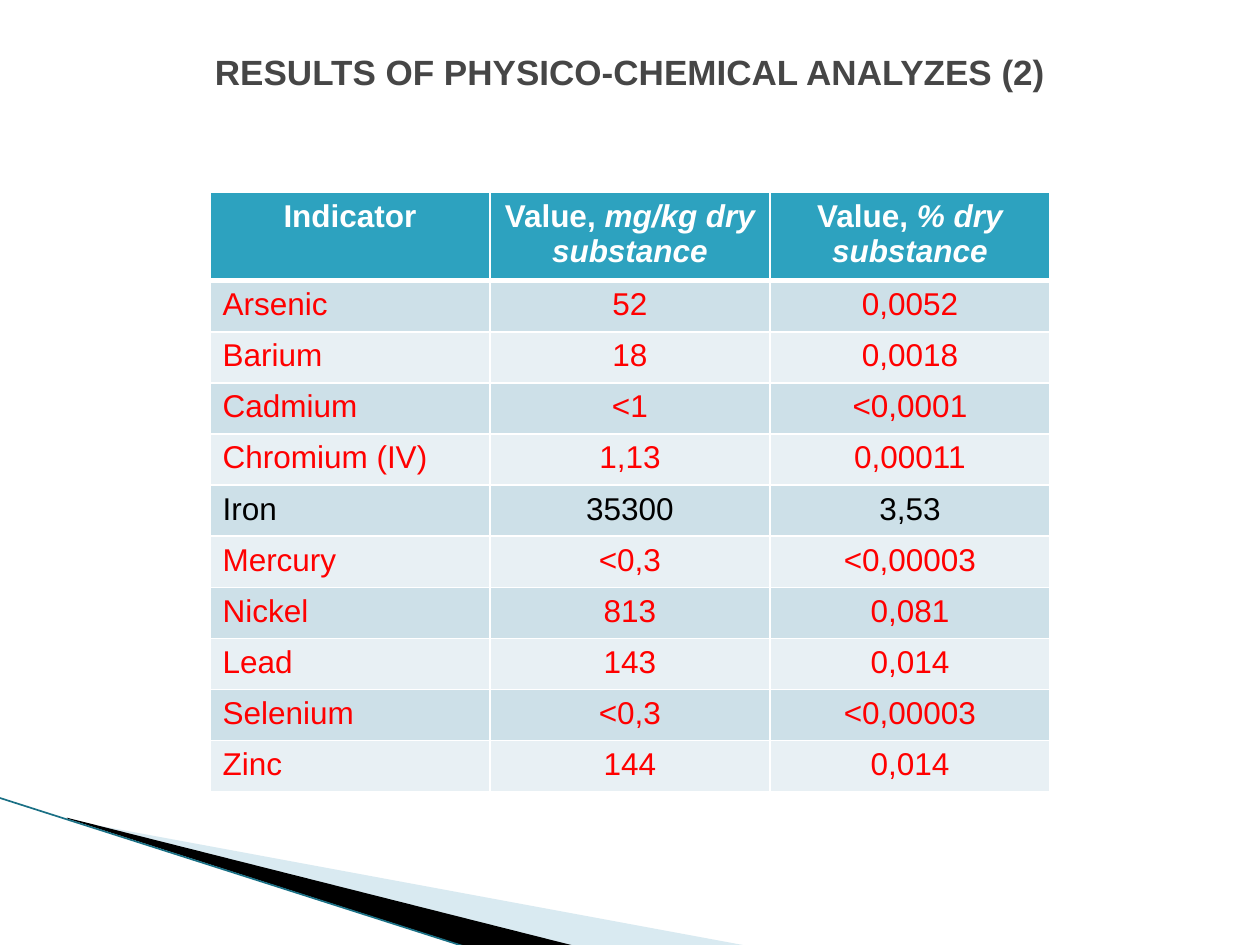
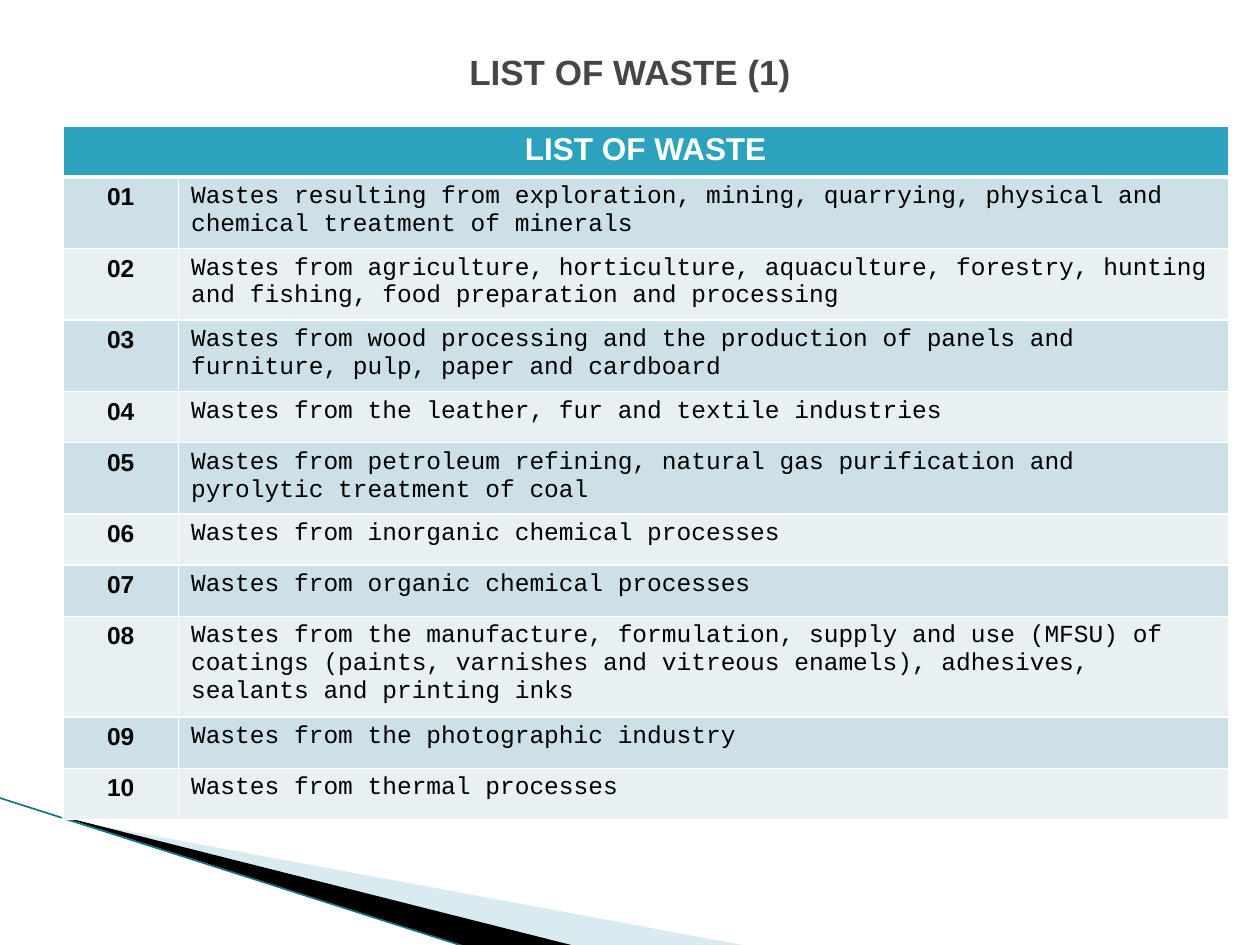
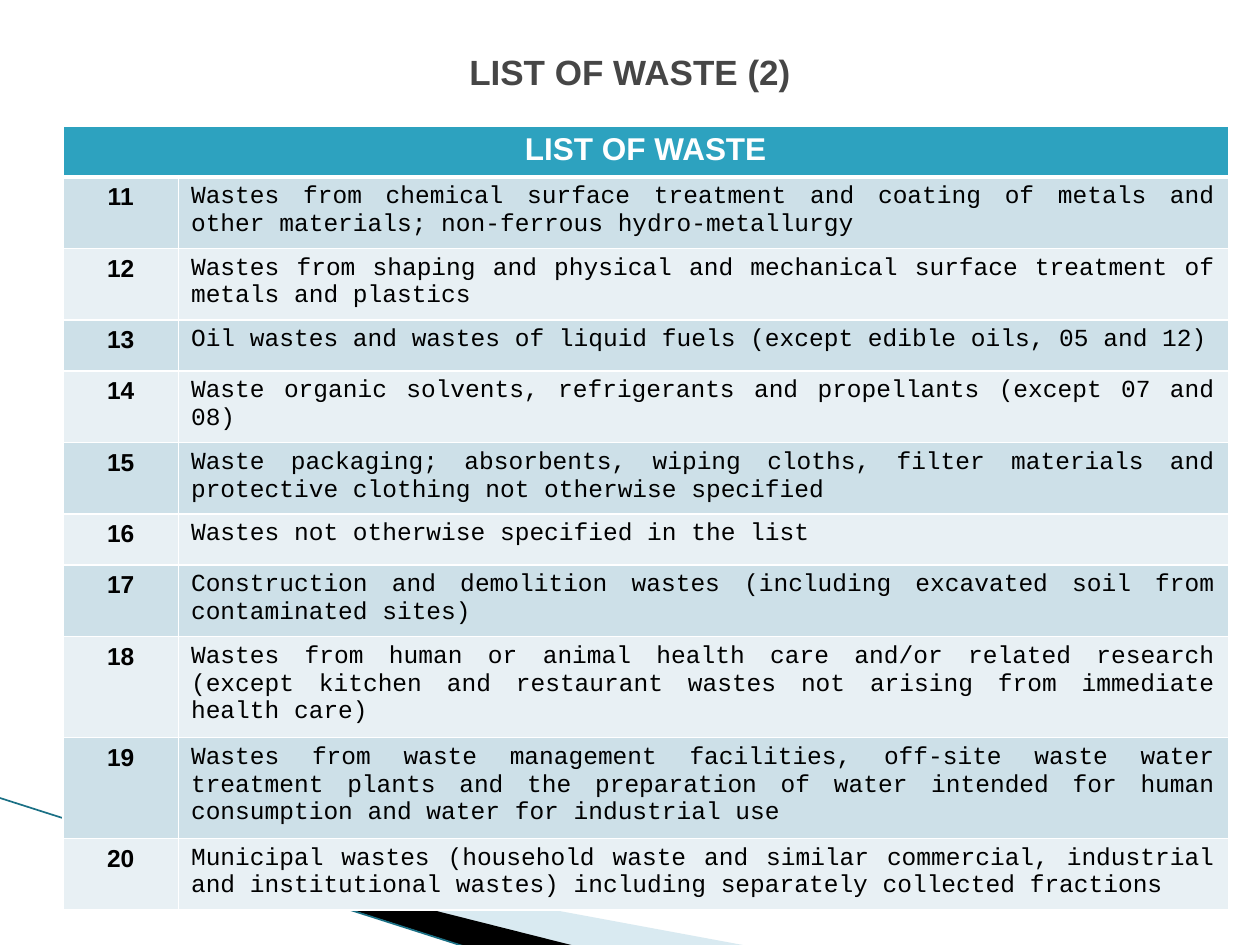
from lxml import etree
from pptx import Presentation, util as u
from pptx.dml.color import RGBColor
from pptx.enum import shapes, text
from pptx.oxml import ns

TEAL, WHITE, BLACK, RED, GREY = "2DA2BF", "FFFFFF", "000000", "FF0000", "464646"
BANDS = ["CDE0E8", "E8F0F4"]
SANS, MONO = "Arial", "Courier New"
LEFT, MID, JUST = text.PP_ALIGN.LEFT, text.PP_ALIGN.CENTER, text.PP_ALIGN.JUSTIFY
ROW = 29.2

# Slide contents: in a header, the part after "|" is in italics
METALS = [
    ("Arsenic", "52", "0,0052"),
    ("Barium", "18", "0,0018"),
    ("Cadmium", "<1", "<0,0001"),
    ("Chromium (IV)", "1,13", "0,00011"),
    ("Iron", "35300", "3,53"),
    ("Mercury", "<0,3", "<0,00003"),
    ("Nickel", "813", "0,081"),
    ("Lead", "143", "0,014"),
    ("Selenium", "<0,3", "<0,00003"),
    ("Zinc", "144", "0,014"),
]
WASTES = [
    "Wastes resulting from exploration, mining, quarrying, physical and chemical treatment of minerals",
    "Wastes from agriculture, horticulture, aquaculture, forestry, hunting and fishing, "
    "food preparation and processing",
    "Wastes from wood processing and the production of panels and furniture, pulp, paper and cardboard",
    "Wastes from the leather, fur and textile industries",
    "Wastes from petroleum refining, natural gas purification and pyrolytic treatment of coal",
    "Wastes from inorganic chemical processes",
    "Wastes from organic chemical processes",
    "Wastes from the manufacture, formulation, supply and use (MFSU) of coatings "
    "(paints, varnishes and vitreous enamels), adhesives, sealants and printing inks",
    "Wastes from the photographic industry",
    "Wastes from thermal processes",
    "Wastes from chemical surface treatment and coating of metals and other materials; "
    "non-ferrous hydro-metallurgy",
    "Wastes from shaping and physical and mechanical surface treatment of metals and plastics",
    "Oil wastes and wastes of liquid fuels (except edible oils, 05 and 12)",
    "Waste organic solvents, refrigerants and propellants (except 07 and 08)",
    "Waste packaging; absorbents, wiping cloths, filter materials and protective clothing "
    "not otherwise specified",
    "Wastes not otherwise specified in the list",
    "Construction and demolition wastes (including excavated soil from contaminated sites)",
    "Wastes from human or animal health care and/or related research "
    "(except kitchen and restaurant wastes not arising from immediate health care)",
    "Wastes from waste management facilities, off-site waste water treatment plants and "
    "the preparation of water intended for human consumption and water for industrial use",
    "Municipal wastes (household waste and similar commercial, industrial and "
    "institutional wastes) including separately collected fractions",
]
CODES = [(f"{n:02}", waste) for n, waste in enumerate(WASTES, 1)]
HEADS = ("Indicator", "Value, |mg/kg dry substance", "Value, |% dry substance")

# Title, table left and top, column widths, header, rows, alignment of the long text
SLIDES = [
    ("RESULTS OF PHYSICO-CHEMICAL ANALYZES (2)", 120, 110, [160] * 3, HEADS, METALS, None),
    ("LIST OF WASTE (1)", 36, 72, [66, 600], ("LIST OF WASTE", ""), CODES[:10], LEFT),
    ("LIST OF WASTE (2)", 36, 72, [66, 600], ("LIST OF WASTE", ""), CODES[10:], JUST),
]

# Corner wedges: colour, opacity in percent, points
WEDGES = [
    ("A0CBDC", 40, [(39.6, 468.7), (428.4, 540.7), (328.3, 540.7), (39.6, 468)]),
    (BLACK, 100, [(38.2, 467.3), (329, 540.7), (267.8, 541.4), (38.9, 468)]),
]


def rgb(code):
    return RGBColor.from_string(code)


def write(frame, words, size=18, color=BLACK, bold=False, font=SANS, align=MID):
    para = frame.paragraphs[0]
    para.alignment = align
    for n, part in enumerate(words.split("|")):
        run = para.add_run()
        run.text = part
        run.font.size, run.font.name = u.Pt(size), font
        run.font.bold, run.font.italic = bold, n > 0
        run.font.color.rgb = rgb(color)


prs = Presentation()
prs.slide_width, prs.slide_height = u.Pt(720), u.Pt(540)

for title, left, top, widths, heads, rows, align in SLIDES:
    slide = prs.slides.add_slide(prs.slide_layouts[6])

    # Corner wedges and edge line
    for color, alpha, spots in WEDGES:
        spots = [(u.Pt(x), u.Pt(y)) for x, y in spots]
        form = slide.shapes.build_freeform(*spots[0])
        form.add_line_segments(spots[1:])
        wedge = form.convert_to_shape()
        wedge.shadow.inherit = False
        wedge.line.fill.background()
        wedge.fill.solid()
        wedge.fill.fore_color.rgb = rgb(color)
        if alpha < 100:
            tint = wedge.fill._xPr.find(".//" + ns.qn("a:srgbClr"))
            etree.SubElement(tint, ns.qn("a:alpha"), val=str(alpha * 1000))
    edge = slide.shapes.add_connector(
        shapes.MSO_CONNECTOR.STRAIGHT, u.Pt(-0.7), u.Pt(455.8), u.Pt(267.1), u.Pt(541.4))
    edge.line.color.rgb = rgb("1A7085")
    edge.line.width = u.Pt(0.95)
    etree.SubElement(edge._element.spPr, ns.qn("a:effectLst"))

    # Title
    box = slide.shapes.add_textbox(u.Pt(12), u.Pt(21.6), u.Pt(696), u.Pt(38.2))
    box.text_frame.word_wrap = True
    box.text_frame.vertical_anchor = text.MSO_ANCHOR.MIDDLE
    write(box.text_frame, title, size=20, color=GREY, bold=True)

    # Table
    count = len(rows) + 1
    grid = slide.shapes.add_table(
        count, len(widths), u.Pt(left), u.Pt(top), u.Pt(sum(widths)), u.Pt(ROW * count)).table
    grid.horz_banding = False
    for col, width in zip(grid.columns, widths):
        col.width = u.Pt(width)
    for r, row in enumerate([heads, *rows]):
        grid.rows[r].height = u.Pt(ROW)
        for c, words in enumerate(row):
            cell = grid.cell(r, c)

            # White borders, thick below the header
            props = cell._tc.get_or_add_tcPr()
            for side in "LRTB":
                thick = (r, side) in [(0, "B"), (1, "T")]
                line = etree.SubElement(props, ns.qn("a:ln" + side), w=str(u.Pt(3 if thick else 1)))
                fill = etree.SubElement(line, ns.qn("a:solidFill"))
                etree.SubElement(fill, ns.qn("a:srgbClr"), val=WHITE)
            cell.fill.solid()
            cell.fill.fore_color.rgb = rgb(BANDS[(r - 1) % 2] if r else TEAL)

            # Cell text
            if r == 0:
                if words:
                    write(cell.text_frame, words, color=WHITE, bold=True)
            elif align is None:
                write(cell.text_frame, words, color=BLACK if row[0] == "Iron" else RED,
                      align=MID if c else LEFT)
            elif c == 0:
                write(cell.text_frame, words, size=14, bold=True)
            else:
                write(cell.text_frame, words, size=14, font=MONO, align=align)
    if align is not None:
        grid.cell(0, 0).merge(grid.cell(0, 1))

prs.save("out.pptx")
